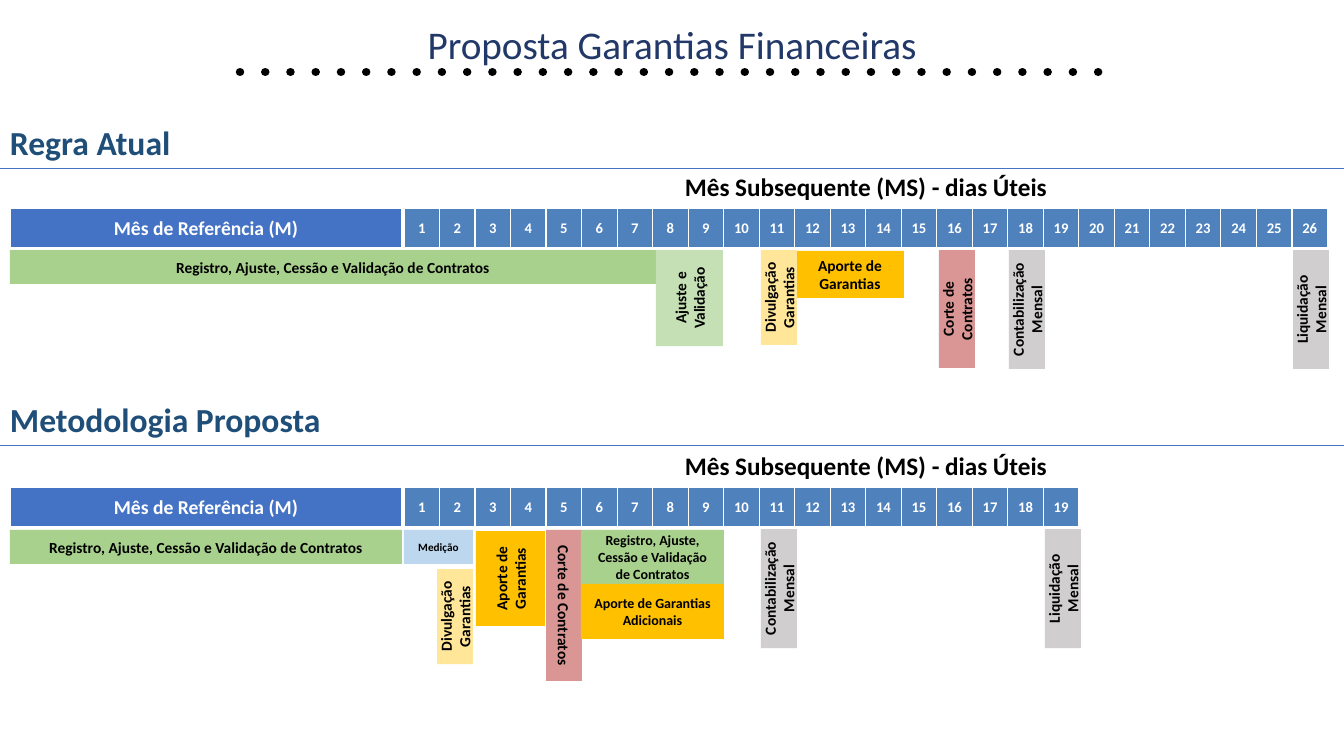
from lxml.etree import SubElement as Sub
from pptx import Presentation
from pptx.dml.color import RGBColor
from pptx.enum.shapes import MSO_CONNECTOR as Link, MSO_SHAPE as Geo
from pptx.enum.text import MSO_ANCHOR as Anchor, PP_ALIGN as Align
from pptx.oxml import parse_xml
from pptx.oxml.ns import nsdecls, qn
from pptx.util import Pt

SCALE = 914400 / 100.8
WIDTH, HEIGHT = 1344, 756
FONT = "Calibri"

WHITE = RGBColor(0xFF, 0xFF, 0xFF)
BLACK = RGBColor(0x00, 0x00, 0x00)
NAVY = RGBColor(0x21, 0x38, 0x68)
TEAL = RGBColor(0x1F, 0x4E, 0x79)
BLUE = RGBColor(0x44, 0x72, 0xC4)
STEEL = RGBColor(0x4F, 0x81, 0xBD)
SKY = RGBColor(0xBD, 0xD7, 0xEE)
GREEN = RGBColor(0xA9, 0xD1, 0x8E)
MINT = RGBColor(0xC5, 0xE0, 0xB4)
GOLD = RGBColor(0xFF, 0xC0, 0x00)
CREAM = RGBColor(0xFF, 0xE6, 0x99)
ROSE = RGBColor(0xD9, 0x96, 0x94)
GRAY = RGBColor(0xD0, 0xCE, 0xCE)

REGISTER = "Registro, Ajuste, Cessão e Validação de Contratos"
ADJUST = "Ajuste e Validação"
NOTICE = "Divulgação Garantias"
DEPOSIT = "Aporte de Garantias"
CUT = "Corte de Contratos"
LEDGER = "Contabilização Mensal"
SETTLE = "Liquidação Mensal"

# text, fill, left, top, width, height as seen, turn, size
CURRENT = [
    (REGISTER, GREEN, 10, 250, 646, 34, 0, 11),
    (CUT, ROSE, 939, 250, 36, 118, 270, 11),
    (LEDGER, GRAY, 1009, 250, 36, 119, 270, 11),
    (DEPOSIT, GOLD, 796, 251, 108, 47, 0, 11),
    (NOTICE, CREAM, 761, 250, 36, 95, 270, 11),
    (SETTLE, GRAY, 1293, 250, 36, 119, 270, 11),
    (ADJUST, MINT, 656, 250, 67, 96, 270, 11),
]
PROPOSED = [
    (CUT, ROSE, 546, 530, 36, 151, 90, 11),
    (LEDGER, GRAY, 761, 529, 36, 119, 270, 11),
    (SETTLE, GRAY, 1045, 529, 36, 119, 270, 11),
    (DEPOSIT, GOLD, 476, 531, 69, 95, 270, 11),
    (NOTICE, CREAM, 437, 569, 36, 95, 270, 11),
    (REGISTER, GREEN, 10, 530, 392, 34, 0, 11),
    (REGISTER, GREEN, 581, 530, 143, 54, 0, 10),
    ("Aporte de Garantias Adicionais", GOLD, 581, 584, 143, 55, 0, 10),
    ("Medição", SKY, 404, 530, 69, 34, 0, 8),
]


def px(*values):
    return [round(v * SCALE) for v in values]


def write(frame, text, size, color, bold=True, align=Align.CENTER):
    para = frame.paragraphs[0]
    para.alignment = align
    run = para.add_run()
    run.text = text
    font = run.font
    font.name, font.size, font.bold = FONT, Pt(size), bold
    font.color.rgb = color
    return para


def add_label(slide, text, place, size, color, **style):
    frame = slide.shapes.add_textbox(*px(*place)).text_frame
    frame.word_wrap = True
    return frame, write(frame, text, size, color, **style)


def add_title(slide):
    frame, para = add_label(slide, "Proposta Garantias Financeiras",
                            (0, 10, WIDTH, 58), 28, NAVY, bold=False)
    frame.vertical_anchor = Anchor.MIDDLE
    frame.margin_left = frame.margin_right = px(3)[0]
    frame.margin_top = frame.margin_bottom = px(3)[0]
    para.line_spacing = 1.2
    rule = add_rule(slide, 240, 1104, 72, BLACK, 6)
    ln = rule.line._get_or_add_ln()
    ln.set("cap", "rnd")
    dash = Sub(ln, qn("a:custDash"))
    Sub(dash, qn("a:ds"), d="100000", sp="200000")
    Sub(ln, qn("a:round"))


def add_rule(slide, left, right, top, color, weight):
    rule = slide.shapes.add_connector(
        Link.STRAIGHT, *px(left, top, right, top))
    rule.line.color.rgb = color
    rule.line.width = Pt(weight)
    Sub(rule._element.spPr, qn("a:effectLst"))
    return rule


def add_box(slide, text, fill, left, top, width, height, turn, size):
    """Place a bar by its visible frame, swapping sides when it is turned."""
    if turn:
        shift = (width - height) / 2
        left, top = left + shift, top - shift
        width, height = height, width
    box = slide.shapes.add_shape(
        Geo.RECTANGLE, *px(left, top, width, height))
    box.rotation = turn
    box.shadow.inherit = False
    box.fill.solid()
    box.fill.fore_color.rgb = fill
    box.line.fill.background()
    frame = box.text_frame
    frame.word_wrap = True
    frame.vertical_anchor = Anchor.MIDDLE
    write(frame, text, size, BLACK)


def add_edges(cell):
    props = cell._tc.get_or_add_tcPr()
    for spot, (side, weight) in enumerate(zip("LRTB", (1, 1, 1, 3))):
        props.insert(spot, parse_xml(
            f'<a:ln{side} {nsdecls("a")} w="{Pt(weight)}"><a:solidFill>'
            f'<a:srgbClr val="{WHITE}"/></a:solidFill></a:ln{side}>'))


def add_strip(slide, texts, left, top, width, fill, size):
    """Add a one-row table with equal columns."""
    table = slide.shapes.add_table(
        1, len(texts), *px(left, top, width, 41)).table
    for col, cell, text in zip(table.columns, table.rows[0].cells, texts):
        col.width = px(width / len(texts))[0]
        cell.fill.solid()
        cell.fill.fore_color.rgb = fill
        cell.margin_left = cell.margin_right = 0
        cell.vertical_anchor = Anchor.MIDDLE
        write(cell.text_frame, text, size, WHITE)
        add_edges(cell)


def add_plan(slide, name, top, strip, days, width, boxes):
    """Add one section: heading, rule, month strips and its bars."""
    add_strip(slide, ["Mês de Referência (M)"], 10, strip, 392, BLUE, 14)
    numbers = [str(day) for day in range(1, days + 1)]
    add_strip(slide, numbers, 404, strip, width, STEEL, 10.5)
    add_label(slide, "Mês Subsequente (MS) - dias Úteis",
              (404, strip - 42, 924, 40), 18, BLACK)
    for box in boxes:
        add_box(slide, *box)
    add_rule(slide, 0, WIDTH, top + 51, BLUE, 0.5)
    add_label(slide, name, (0, top, 517, 50), 24, TEAL, align=Align.LEFT)


def main():
    deck = Presentation()
    deck.slide_width, deck.slide_height = px(WIDTH, HEIGHT)
    slide = deck.slides.add_slide(deck.slide_layouts[6])
    add_title(slide)
    add_plan(slide, "Regra Atual", 117, 208, 26, 924, CURRENT)
    add_plan(slide, "Metodologia Proposta", 394, 487, 19, 675, PROPOSED)
    deck.save("out.pptx")


if __name__ == "__main__":
    main()
